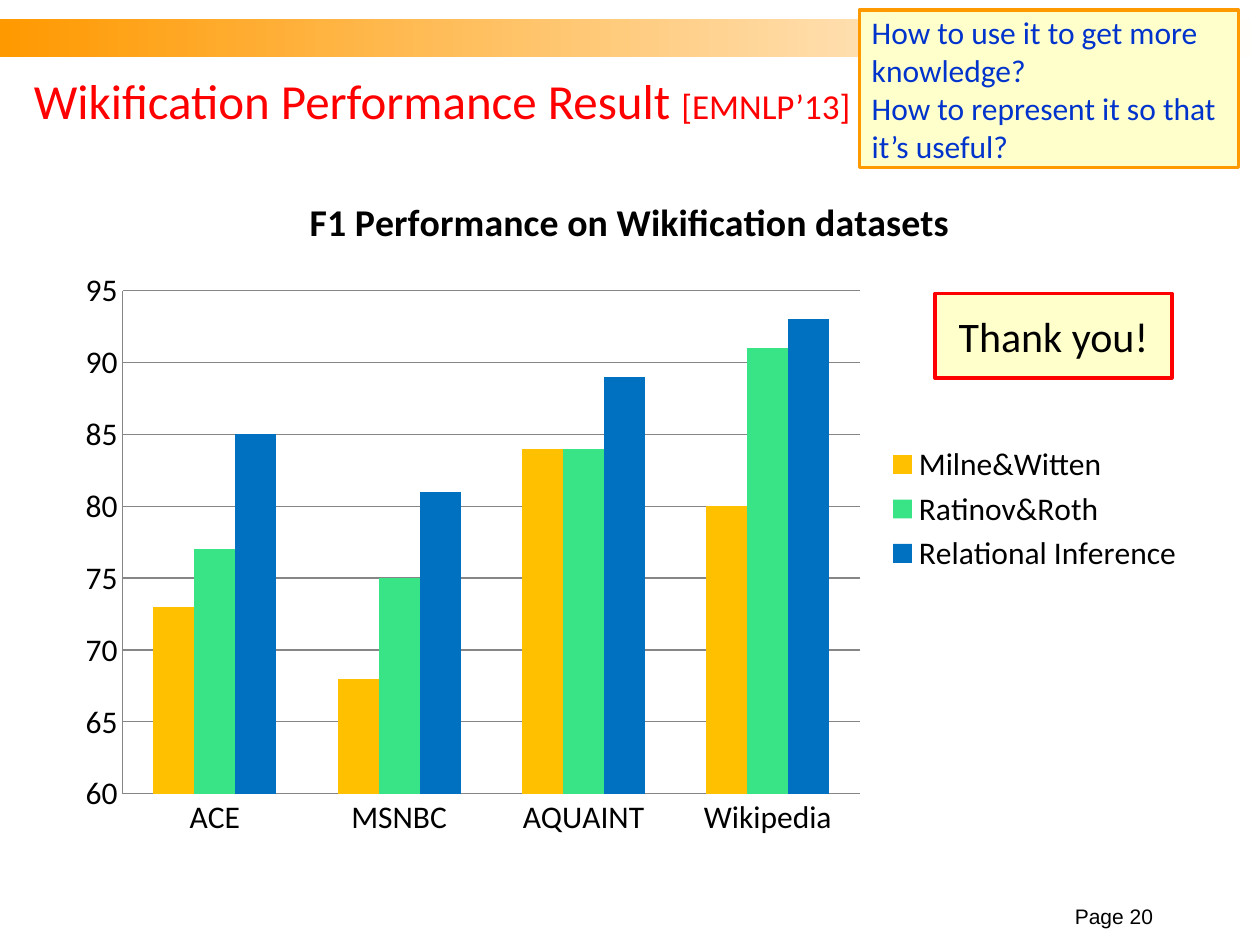
from dataclasses import dataclass
from typing import Optional

from pptx import Presentation
from pptx.chart.data import CategoryChartData
from pptx.dml.color import RGBColor
from pptx.enum.chart import XL_CHART_TYPE, XL_LEGEND_POSITION, XL_TICK_MARK
from pptx.enum.shapes import MSO_SHAPE
from pptx.enum.text import MSO_ANCHOR, PP_ALIGN
from pptx.util import Inches, Pt

RECTANGLE = MSO_SHAPE.RECTANGLE
CLUSTERED = XL_CHART_TYPE.COLUMN_CLUSTERED
LEGEND_RIGHT = XL_LEGEND_POSITION.RIGHT
NO_TICKS = XL_TICK_MARK.NONE
LEFT, CENTER, RIGHT = PP_ALIGN.LEFT, PP_ALIGN.CENTER, PP_ALIGN.RIGHT
MIDDLE, BOTTOM = MSO_ANCHOR.MIDDLE, MSO_ANCHOR.BOTTOM

BLACK = RGBColor(0x00, 0x00, 0x00)
WHITE = RGBColor(0xFF, 0xFF, 0xFF)
RED = RGBColor(0xFF, 0x00, 0x00)
ORANGE = RGBColor(0xFF, 0x99, 0x00)
CREAM = RGBColor(0xFF, 0xFF, 0xCC)
BLUE = RGBColor(0x00, 0x33, 0xCC)
GRAY = RGBColor(0x86, 0x86, 0x86)
AMBER = RGBColor(0xFF, 0xC0, 0x00)
GREEN = RGBColor(0x38, 0xE4, 0x86)
SERIES_BLUE = RGBColor(0x00, 0x70, 0xC0)


@dataclass
class Run:
    text: str
    size: float
    color: RGBColor
    font: str = "Calibri"


@dataclass
class Box:
    position: tuple[float, float, float, float]
    paragraphs: list[list[Run]]
    alignment: PP_ALIGN = LEFT
    anchor: MSO_ANCHOR = MIDDLE
    border: Optional[RGBColor] = None


@dataclass
class Series:
    name: str
    values: tuple[int, ...]
    color: RGBColor


BOXES = [
    # Title
    Box((0.17, 0.5, 9, 0.58), [[
        Run("Wikification Performance Result ", 28, RED),
        Run("[EMNLP’13]", 20, RED),
    ]]),
    # Questions
    Box((6.82, 0.08, 3.01, 1.25), [
        [Run("How to use it to get more knowledge?", 18, BLUE)],
        [Run("How to represent it so that it’s useful?", 18, BLUE)],
    ], border=ORANGE),
    # Page number
    Box((8.25, 7.17, 1, 0.25), [[Run("Page 20", 12, BLACK, "Arial")]], RIGHT, BOTTOM),
    # Closing
    Box((7.42, 2.33, 1.88, 0.67), [[Run("Thank you!", 24, BLACK)]], CENTER, border=RED),
]

CATEGORIES = ("ACE", "MSNBC", "AQUAINT", "Wikipedia")
SERIES = [
    Series("Milne&Witten", (73, 68, 84, 80), AMBER),
    Series("Ratinov&Roth", (77, 75, 84, 91), GREEN),
    Series("Relational Inference", (85, 81, 89, 93), SERIES_BLUE),
]


def set_attributes(target, values: dict) -> None:
    for name, value in values.items():
        setattr(target, name, value)


def add_banner(slide) -> None:
    banner = slide.shapes.add_shape(RECTANGLE, 0, Inches(0.15), Inches(10), Inches(0.3))
    banner.shadow.inherit = False
    banner.line.fill.background()
    banner.fill.gradient()
    banner.fill.gradient_angle = 0
    for stop, color, position in zip(banner.fill.gradient_stops, (ORANGE, WHITE), (0, 1)):
        stop.color.rgb = color
        stop.position = position


def add_box(slide, box: Box) -> None:
    position = [Inches(length) for length in box.position]
    if box.border is None:
        shape = slide.shapes.add_textbox(*position)
    else:
        shape = slide.shapes.add_shape(RECTANGLE, *position)
        shape.shadow.inherit = False
        shape.fill.solid()
        shape.fill.fore_color.rgb = CREAM
        shape.line.color.rgb = box.border
        shape.line.width = Pt(2)
    frame = shape.text_frame
    set_attributes(frame, {"word_wrap": True, "vertical_anchor": box.anchor})
    for index, runs in enumerate(box.paragraphs):
        paragraph = frame.add_paragraph() if index else frame.paragraphs[0]
        paragraph.alignment = box.alignment
        for item in runs:
            run = paragraph.add_run()
            run.text = item.text
            set_attributes(run.font, {"name": item.font, "size": Pt(item.size)})
            run.font.color.rgb = item.color


def add_performance_chart(slide) -> None:
    data = CategoryChartData()
    data.categories = CATEGORIES
    for item in SERIES:
        data.add_series(item.name, item.values)
    chart = slide.shapes.add_chart(
        CLUSTERED, Inches(0.5), Inches(1.33), Inches(9), Inches(5.42), data
    ).chart
    set_attributes(chart.font, {"name": "Calibri", "size": Pt(18)})
    chart.font.color.rgb = BLACK

    # Chart title and legend
    set_attributes(chart, {"has_title": True, "has_legend": True})
    title = chart.chart_title.text_frame
    title.text = "F1 Performance on Wikification datasets"
    title_font = title.paragraphs[0].runs[0].font
    set_attributes(title_font, {"name": "Calibri", "size": Pt(21.6), "bold": True})
    title_font.color.rgb = BLACK
    set_attributes(chart.legend, {"position": LEGEND_RIGHT, "include_in_layout": False})

    # Axes
    value_axis = chart.value_axis
    set_attributes(value_axis, {
        "minimum_scale": 60, "maximum_scale": 95, "major_unit": 5,
        "has_major_gridlines": True,
    })
    value_axis.major_gridlines.format.line.color.rgb = GRAY
    for axis in (chart.category_axis, value_axis):
        set_attributes(axis, {"major_tick_mark": NO_TICKS, "minor_tick_mark": NO_TICKS})
        axis.format.line.color.rgb = GRAY

    # Columns
    plot = chart.plots[0]
    set_attributes(plot, {"gap_width": 150, "overlap": 0, "vary_by_categories": False})
    for series, item in zip(plot.series, SERIES):
        series.format.fill.solid()
        series.format.fill.fore_color.rgb = item.color


def main() -> None:
    presentation = Presentation()
    presentation.slide_width = Inches(10)
    presentation.slide_height = Inches(7.5)
    slide = presentation.slides.add_slide(presentation.slide_layouts[6])
    add_banner(slide)
    add_performance_chart(slide)
    for box in BOXES:
        add_box(slide, box)
    presentation.save("out.pptx")


if __name__ == "__main__":
    main()
